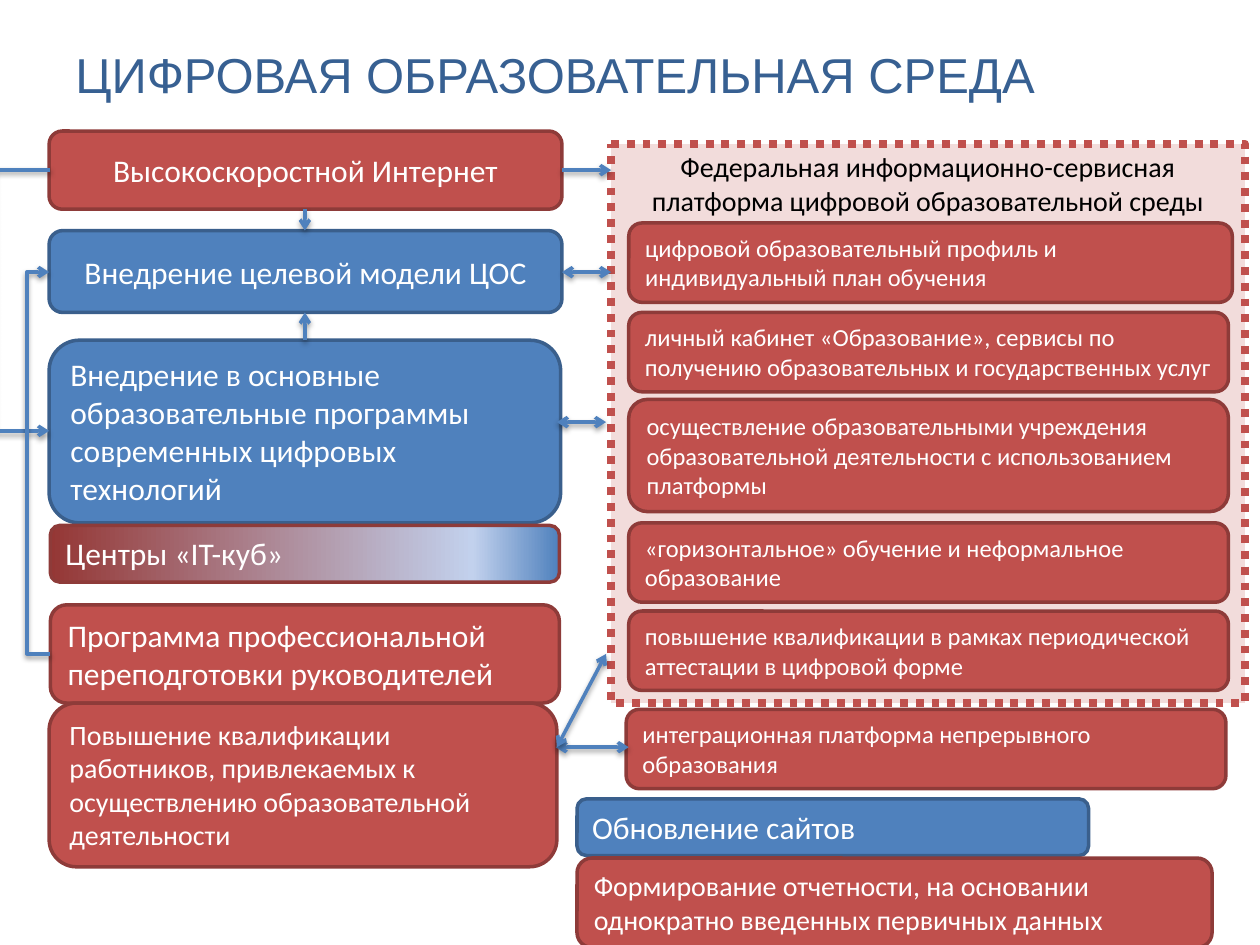
from dataclasses import dataclass

from lxml import etree
from pptx import Presentation, util as u
from pptx.dml.color import RGBColor
from pptx.enum import dml, shapes, text
from pptx.oxml import ns

COLS, ROWS = 100, 75  # slide grid; one cell is a tenth of an inch
WIDTH, HEIGHT = u.Inches(10), u.Inches(7.5)


@dataclass(frozen=True)
class Theme:
    font: str = "Calibri"
    title_font: str = "Arial"
    title: str = "376092"
    red: tuple = ("C0504D", "8E3B39")
    blue: tuple = ("4F81BD", "3A5F8C")
    panel: tuple = ("F2DCDB", "C0504D")
    fade: tuple = ((0, "4F81BD"), (17, "C2D1ED"), (100, "953735"))
    white: str = "FFFFFF"
    black: str = "000000"
    heading: int = 28
    large: int = 18
    medium: int = 16
    small: int = 14
    line: int = 2
    dotted: float = 4.5


T = Theme()


def rgb(value):
    return RGBColor.from_string(value)


def x(col):
    return round(WIDTH * col / COLS)


def y(row):
    return round(HEIGHT * row / ROWS)


def place(col, row, cols, rows):
    return x(col), y(row), x(cols), y(rows)


def sub(parent, tag, **attrs):
    return etree.SubElement(parent, ns.qn(tag), {k: str(v) for k, v in attrs.items()})


def write(sp, lines, size, color, font=T.font, align=text.PP_ALIGN.LEFT,
          anchor=text.MSO_ANCHOR.TOP):
    tf = sp.text_frame
    tf.word_wrap = True
    tf.vertical_anchor = anchor
    for i, line in enumerate(lines):
        p = tf.add_paragraph() if i else tf.paragraphs[0]
        p.alignment = align
        r = p.add_run()
        r.text = line
        r.font.name, r.font.size = font, u.Pt(size)
        r.font.color.rgb = rgb(color)
    return tf


def block(s, grid, colors, kind=shapes.MSO_SHAPE.ROUNDED_RECTANGLE, width=T.line):
    fill, line = colors
    sp = s.shapes.add_shape(kind, *place(*grid))
    sp.shadow.inherit = False
    sp.fill.solid()
    sp.fill.fore_color.rgb = rgb(fill)
    sp.line.color.rgb = rgb(line)
    sp.line.width = u.Pt(width)
    return sp


def centered_box(s, grid, colors, line):
    write(block(s, grid, colors), [line], T.large, T.white,
          align=text.PP_ALIGN.CENTER, anchor=text.MSO_ANCHOR.MIDDLE)


def list_box(s, grid, colors, size, *lines):
    sp = block(s, grid, colors)
    tf = write(sp, lines, size, T.white)
    tf.auto_size = text.MSO_AUTO_SIZE.SHAPE_TO_FIT_TEXT
    return sp


def fade(sp):
    sp.fill.gradient()
    sp.fill.gradient_angle = 180
    stops = sp._element.spPr.find(ns.qn("a:gradFill")).find(ns.qn("a:gsLst"))
    for old in list(stops):
        stops.remove(old)
    for share, color in T.fade:
        sub(sub(stops, "a:gs", pos=share * 1000), "a:srgbClr", val=color)


def arrow(s, start, end, both=False, bend=None):
    kinds = shapes.MSO_CONNECTOR
    kind = kinds.STRAIGHT if bend is None else kinds.ELBOW
    c = s.shapes.add_connector(kind, x(start[0]), y(start[1]), x(end[0]), y(end[1]))
    c.line.color.rgb = rgb(T.blue[0])
    c.line.width = u.Pt(T.line)
    ln = c.line._get_or_add_ln()
    if both:
        sub(ln, "a:headEnd", type="arrow")
    sub(ln, "a:tailEnd", type="arrow")
    # Soft shadow straight below the line
    shadow = sub(sub(c._element.spPr, "a:effectLst"), "a:outerShdw",
                 blurRad=u.Pt(3.1), dist=u.Pt(1.6), dir=5400000, rotWithShape=0)
    sub(sub(shadow, "a:srgbClr", val=T.black), "a:alpha", val=38000)
    if bend is not None:
        share = (bend - start[0]) / (end[0] - start[0])
        guides = c._element.spPr.find(ns.qn("a:prstGeom")).get_or_add_avLst()
        sub(guides, "a:gd", name="adj1", fmla=f"val {round(share * 100000)}")


def add_title(s):
    write(s.shapes.add_textbox(*place(5, 2.3, 83.5, 7.1)),
          ["ЦИФРОВАЯ ОБРАЗОВАТЕЛЬНАЯ СРЕДА"], T.heading, T.title, T.title_font,
          anchor=text.MSO_ANCHOR.MIDDLE)


def add_platform(s):
    sp = block(s, (48.5, 11.4, 50.3, 44.4), T.panel,
               shapes.MSO_SHAPE.FLOWCHART_PROCESS, T.dotted)
    sp.line.dash_style = dml.MSO_LINE.ROUND_DOT
    write(sp, ["Федеральная информационно-сервисная платформа цифровой "
               "образовательной среды"], T.medium, T.black, align=text.PP_ALIGN.CENTER)
    services = (
        (17.7, 47.9, 6.3, "цифровой образовательный профиль и индивидуальный план обучения"),
        (24.8, 47.6, 6.3, "личный кабинет «Образование», сервисы по получению "
                          "образовательных и государственных услуг"),
        (31.7, 47.6, 8.9, "осуществление образовательными учреждения образовательной "
                          "деятельности с использованием платформы"),
        (41.5, 47.6, 6.3, "«горизонтальное» обучение и неформальное образование"),
        (48.5, 47.6, 6.3, "повышение квалификации в рамках периодической аттестации "
                          "в цифровой форме"),
    )
    for row, cols, rows, line in services:
        list_box(s, (49.9, row, cols, rows), T.red, T.small, line)


def add_measures(s):
    # Left column
    centered_box(s, (3.9, 10.4, 40.7, 6.2), T.red, "Высокоскоростной Интернет")
    centered_box(s, (3.9, 18.3, 40.7, 6.5), T.blue, "Внедрение целевой модели ЦОС")
    list_box(s, (3.9, 27, 40.6, 14.5), T.blue, T.large,
             "Внедрение в основные образовательные программы современных "
             "цифровых технологий")
    fade(list_box(s, (4, 41.7, 40.4, 4.5), T.red, T.large, "Центры «IT-куб»"))
    list_box(s, (4, 48, 40.4, 7.8), T.red, T.large,
             "Программа профессиональной переподготовки руководителей")
    list_box(s, (3.9, 55.8, 40.3, 13), T.red, T.medium, "Повышение квалификации",
             "работников, привлекаемых к осуществлению образовательной деятельности")
    # Below the platform
    list_box(s, (49.7, 56.3, 47.6, 6.3), T.red, T.small,
             "интеграционная платформа непрерывного образования")
    list_box(s, (45.8, 63.4, 40.6, 4.5), T.blue, T.large, "Обновление сайтов")
    list_box(s, (45.8, 68.1, 50.4, 7.1), T.red, T.medium,
             "Формирование отчетности, на основании однократно введенных "
             "первичных данных")


def add_arrows(s):
    # Into the target model
    arrow(s, (24.2, 16.6), (24.2, 18.3))
    arrow(s, (24.2, 27), (24.2, 24.8))
    # To the platform
    arrow(s, (44.6, 13.5), (48.5, 13.5))
    arrow(s, (44.6, 21.6), (48.5, 21.6), both=True)
    arrow(s, (44.2, 33.5), (48.1, 33.5), both=True)
    arrow(s, (44.1, 59.3), (49.9, 59.3), both=True)
    arrow(s, (44.2, 59.3), (48.1, 51.9), both=True)
    # Around the left edge
    arrow(s, (4, 13.5), (3.9, 34.2), bend=-0.5)
    arrow(s, (4, 51.9), (3.9, 21.6), bend=2.1)


def main():
    prs = Presentation()
    prs.slide_width, prs.slide_height = WIDTH, HEIGHT
    s = prs.slides.add_slide(prs.slide_layouts[6])
    add_title(s)
    add_platform(s)
    add_measures(s)
    add_arrows(s)
    prs.save("out.pptx")


if __name__ == "__main__":
    main()
